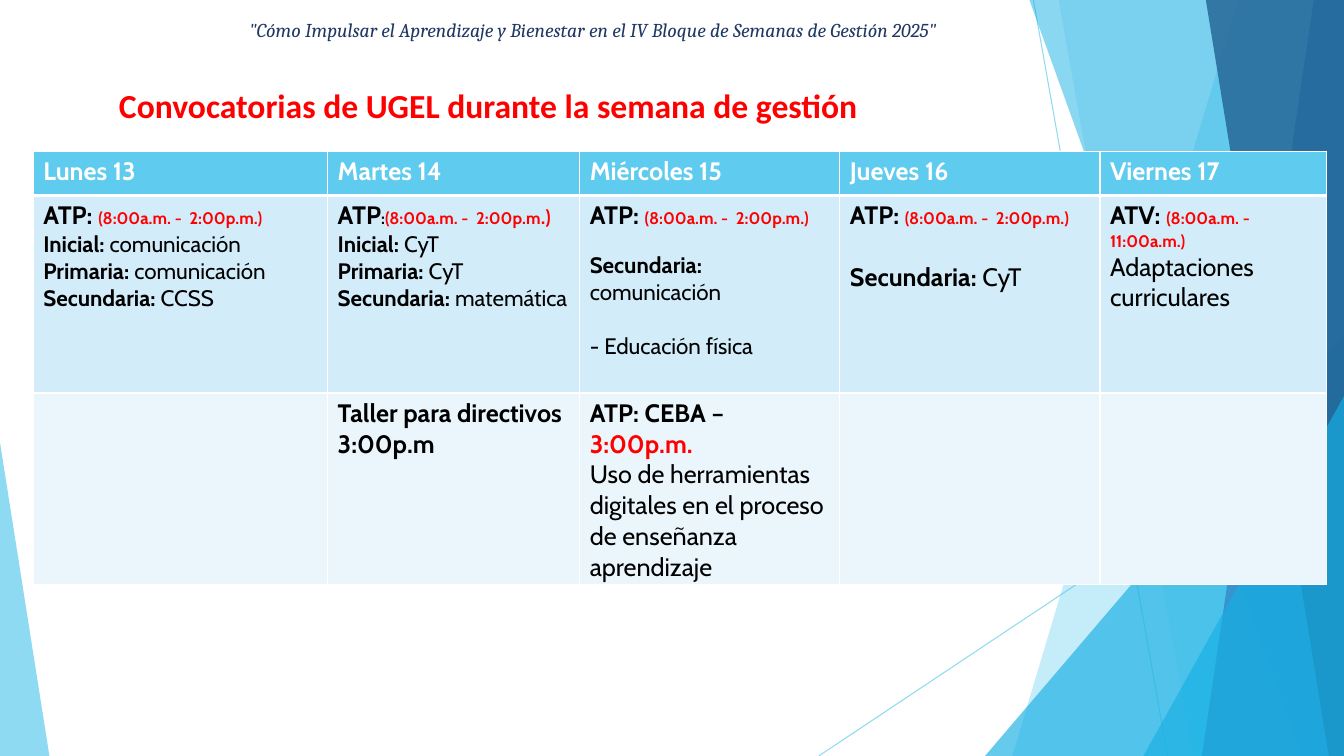
from lxml.etree import SubElement
from pptx import Presentation
from pptx.dml.color import RGBColor
from pptx.enum.shapes import MSO_CONNECTOR, MSO_SHAPE
from pptx.enum.text import MSO_ANCHOR, PP_ALIGN
from pptx.oxml import parse_xml
from pptx.oxml.ns import nsdecls, qn
from pptx.util import Inches, Pt

WIDTH, HEIGHT = 13.33, 7.5
SKY, AZURE, BLUE, NAVY = "5FCBEF", "17B0E4", "2E83C3", "226292"
RED, BLACK, WHITE, INK = "FF0000", "000000", "FFFFFF", "1F3863"

MOTTO = '"Cómo Impulsar el Aprendizaje y Bienestar en el IV Bloque de Semanas de Gestión 2025"'
TITLE = "Convocatorias de UGEL durante la semana de gestión"

# Background facets, back to front: top-left x, bottom-left x (both run to the right edge)
# or a triangle's left, top, width and apex share.
RAYS = [((10.25, 0), (11.58, HEIGHT)), ((WIDTH, 4.03), (8.12, HEIGHT))]
FACETS = [
    ("band", (12.28, 10.04), SKY, 36),
    ("band", (10.5, 11.83), SKY, 20),
    ("triangle", (9.77, 3.33, 3.56, 1), AZURE, 66),
    ("band", (10.21, 12.91), AZURE, 50),
    ("band", (13.03, 11.92), BLUE, 70),
    ("band", (11.96, 13.18), NAVY, 80),
    ("triangle", (11.34, 3.93, 1.99, 1), AZURE, 66),
    ("triangle", (0, 4.39, 0.49, 0), SKY, 70),
]


def bold(text, size=18, color=BLACK):
    return text, size, True, color


def plain(text, size=18):
    return text, size, False, BLACK


def level(name, subject, size=16):
    """A bold school level followed by its subject."""
    return bold(name + ":", size), plain(" " + subject, size)


MORNING = "(8:00a.m. -  2:00p.m.)"
ATP = (bold("ATP: "), bold(MORNING, 12, RED))

# Each cell is a list of (space before in points, runs).
DAYS = ["Lunes 13", "Martes 14", "Miércoles 15", "Jueves 16", "Viernes 17"]
SCHEDULE = [
    [[(0, [bold(day, 18, WHITE)])] for day in DAYS],
    [
        [(0, ATP), (0, level("Inicial", "comunicación")),
         (0, level("Primaria", "comunicación")), (0, level("Secundaria", "CCSS"))],
        [(0, [bold("ATP"), bold(":", 12), bold(MORNING[:-2], 12, RED), bold(".)", 14, RED)]),
         (0, level("Inicial", "CyT")), (0, level("Primaria", "CyT")),
         (0, level("Secundaria", "matemática"))],
        [(0, ATP), (14.6, level("Secundaria", "comunicación")),
         (19.5, [plain("- Educación física", 16)])],
        [(0, ATP), (22, level("Secundaria", "CyT", 18))],
        [(0, [bold("ATV: "), bold("(8:00a.m. -  11:00a.m.)", 12, RED)]),
         (0, [plain("Adaptaciones curriculares")])],
    ],
    [
        [],
        [(0, [bold("Taller para directivos 3:00p.m")])],
        [(0, [bold("ATP: CEBA – "), bold("3:00p.m.", 18, RED)]),
         (0, [plain("Uso de herramientas digitales en el proceso de enseñanza aprendizaje")])],
        [],
        [],
    ],
]
COLUMNS = [2.92, 2.5, 2.58, 2.58, 2.25]
ROWS = [0.44, 1.96, 1.89]
ROW_FILLS = [SKY, "D2ECF9", "EAF6FC"]
RULES = [1, 3, 1, 1]  # weight of the rule above each row, then below the last


def rgb(value):
    return RGBColor.from_string(value)


def set_alpha(shape, percent):
    for color in shape._element.spPr.iter(qn("a:srgbClr")):
        SubElement(color, qn("a:alpha")).set("val", str(percent * 1000))


def draw_ray(shapes, start, end):
    points = [Inches(v) for v in (*start, *end)]
    ray = shapes.add_connector(MSO_CONNECTOR.STRAIGHT, *points)
    ray.line.color.rgb = rgb(SKY)
    ray.line.width = Pt(0.75)
    set_alpha(ray, 70)
    SubElement(ray._element.spPr, qn("a:effectLst"))


def draw_facet(shapes, kind, place, color, opacity):
    if kind == "band":
        top, bottom = place
        outline = [(top, 0), (WIDTH, 0), (WIDTH, HEIGHT), (bottom, HEIGHT)]
        corners = [(Inches(x), Inches(y)) for x, y in outline]
        builder = shapes.build_freeform(*corners[0])
        builder.add_line_segments(corners[1:], close=True)
        facet = builder.convert_to_shape()
    else:
        left, top, width, apex = place
        box = [Inches(v) for v in (left, top, width, HEIGHT - top)]
        facet = shapes.add_shape(MSO_SHAPE.ISOSCELES_TRIANGLE, *box)
        facet.adjustments[0] = apex
    facet.shadow.inherit = False
    facet.line.fill.background()
    facet.fill.solid()
    facet.fill.fore_color.rgb = rgb(color)
    set_alpha(facet, opacity)


def style_run(run, font, size, color, is_bold=False, italic=False):
    run.font.name, run.font.size = font, Pt(size)
    run.font.bold, run.font.italic = is_bold, italic
    run.font.color.rgb = rgb(color)


def write_line(shape, box, text, space, **style):
    """Place a one-line text at the top left of its box."""
    shape.left, shape.top, shape.width, shape.height = [Inches(v) for v in box]
    frame = shape.text_frame
    frame.word_wrap = True
    frame.vertical_anchor = MSO_ANCHOR.TOP
    frame.margin_left = frame.margin_right = frame.margin_bottom = 0
    frame.margin_top = Inches(0.01)
    frame.text = text
    line = frame.paragraphs[0]
    line.alignment = PP_ALIGN.LEFT
    line.space_before = Pt(space)
    style_run(line.runs[0], **style)


def fill_cell(cell, paragraphs, fill, above, below):
    cell.fill.solid()
    cell.fill.fore_color.rgb = rgb(fill)
    borders = [("L", 1), ("R", 1), ("T", above), ("B", below)]
    for place, (side, weight) in enumerate(borders):
        border = parse_xml(
            f'<a:ln{side} {nsdecls("a")} w="{Pt(weight)}"><a:solidFill>'
            f'<a:srgbClr val="{WHITE}"/></a:solidFill></a:ln{side}>')
        cell._tc.get_or_add_tcPr().insert(place, border)
    frame = cell.text_frame
    for number, (space, runs) in enumerate(paragraphs):
        paragraph = frame.add_paragraph() if number else frame.paragraphs[0]
        paragraph.space_before = Pt(space)
        for text, size, is_bold, color in runs:
            run = paragraph.add_run()
            run.text = text
            style_run(run, "Cabin", size, color, is_bold)


def draw_schedule(shapes):
    box = [Inches(v) for v in (0.33, 1.5, sum(COLUMNS), sum(ROWS))]
    table = shapes.add_table(len(ROWS), len(COLUMNS), *box).table
    for column, width in zip(table.columns, COLUMNS):
        column.width = Inches(width)
    for r, cells in enumerate(SCHEDULE):
        table.rows[r].height = Inches(ROWS[r])
        for c, paragraphs in enumerate(cells):
            fill_cell(table.cell(r, c), paragraphs, ROW_FILLS[r], RULES[r], RULES[r + 1])


def main():
    deck = Presentation()
    deck.slide_width, deck.slide_height = Inches(WIDTH), Inches(HEIGHT)
    slide = deck.slides.add_slide(deck.slide_layouts[5])
    shapes = slide.shapes
    for start, end in RAYS:
        draw_ray(shapes, start, end)
    for facet in FACETS:
        draw_facet(shapes, *facet)
    motto = shapes.add_textbox(0, 0, 0, 0)
    write_line(motto, (2.47, 0.17, 7.86, 0.25), MOTTO, 1.1,
               font="Cambria", size=14, color=INK, italic=True)
    write_line(shapes.title, (1.18, 0.83, 10.44, 0.42), TITLE, 0.9,
               font="Calibri", size=24, color=RED, is_bold=True)
    draw_schedule(shapes)
    deck.save("out.pptx")


if __name__ == "__main__":
    main()
